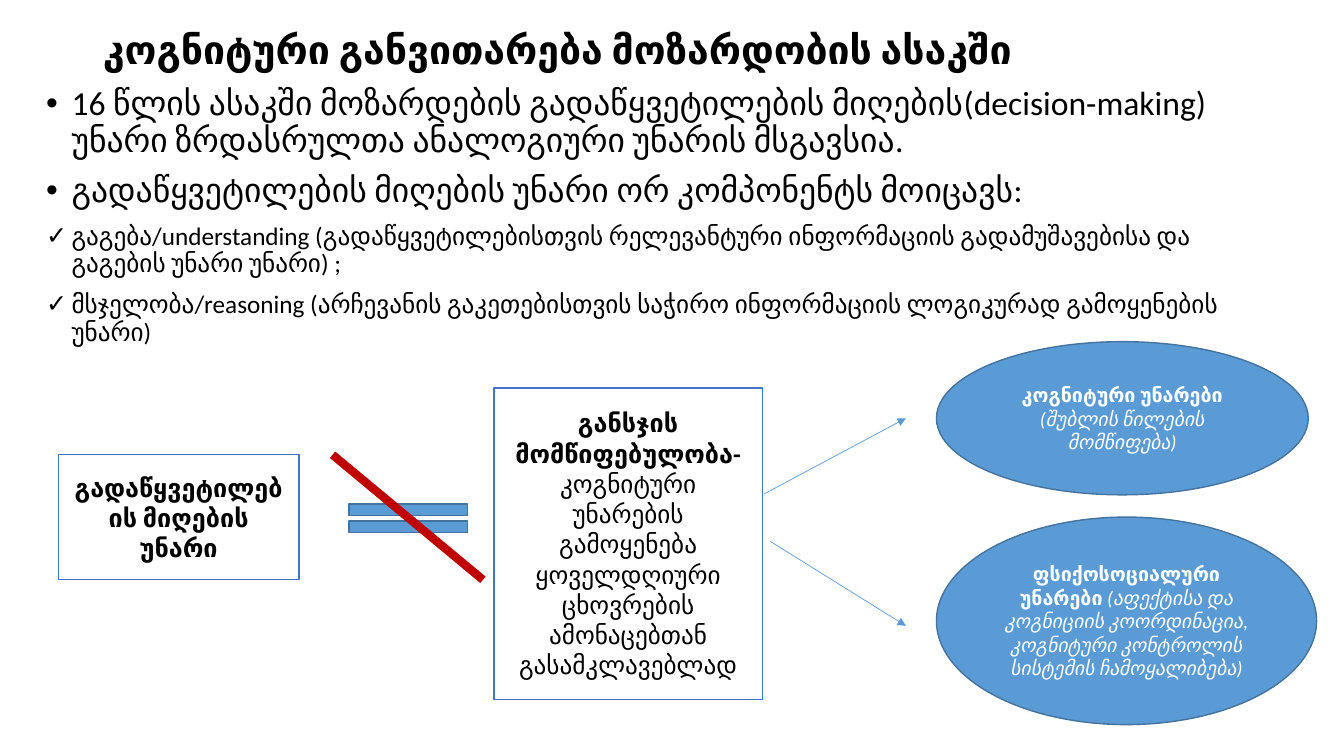
from pptx import Presentation
from pptx.dml.color import RGBColor
from pptx.enum.shapes import MSO_CONNECTOR, MSO_SHAPE
from pptx.enum.text import MSO_ANCHOR, MSO_AUTO_SIZE, PP_ALIGN
from pptx.oxml.ns import qn
from pptx.util import Cm, Pt
from lxml.etree import SubElement

FONT = "Calibri"
BLACK, WHITE = "000000", "FFFFFF"
BLUE, BLUE_EDGE, BOX_EDGE, RED = "5B9BD5", "43739E", "4472C4", "C00000"
BULLETS = [
    ("•", 24, "16 წლის ასაკში მოზარდების გადაწყვეტილების მიღების(decision-making) უნარი ზრდასრულთა ანალოგიური უნარის მსგავსია."),
    ("•", 24, "გადაწყვეტილების მიღების უნარი ორ კომპონენტს მოიცავს:"),
    ("✓", 18, "გაგება/understanding (გადაწყვეტილებისთვის რელევანტური ინფორმაციის გადამუშავებისა და გაგების უნარი უნარი) ;"),
    ("✓", 18, "მსჯელობა/reasoning (არჩევანის გაკეთებისთვის საჭირო ინფორმაციის ლოგიკურად გამოყენების უნარი)"),
]


def color(value):
    return RGBColor.from_string(value)


def apply(target, values):
    for name, value in values.items():
        setattr(target, name, value)


def place(shape, box):
    apply(shape, dict(zip(("left", "top", "width", "height"), map(Cm, box))))


def add_run(paragraph, text, size, font_color, **style):
    run = paragraph.add_run()
    run.text = text
    apply(run.font, {"name": FONT, "size": Pt(size), **style})
    run.font.color.rgb = color(font_color)


def add_title(slide, box, text):
    title = slide.shapes.title
    place(title, box)
    apply(title.text_frame, {
        "auto_size": MSO_AUTO_SIZE.NONE,
        "vertical_anchor": MSO_ANCHOR.MIDDLE,
    })
    paragraph = title.text_frame.paragraphs[0]
    apply(paragraph, {"alignment": PP_ALIGN.LEFT, "line_spacing": 0.9})
    add_run(paragraph, text, 28, BLACK, bold=True)


def add_bullets(slide, box, bullets):
    body = slide.placeholders[1]
    place(body, box)
    frame = body.text_frame
    frame.auto_size = MSO_AUTO_SIZE.NONE
    for index, (mark, size, text) in enumerate(bullets):
        paragraph = frame.add_paragraph() if index else frame.paragraphs[0]
        apply(paragraph, {"line_spacing": 0.9, "space_before": Pt(10)})
        add_run(paragraph, text, size, BLACK)
        properties = paragraph._p.get_or_add_pPr()
        properties.set("marL", str(Cm(0.64)))
        properties.set("indent", str(-Cm(0.64)))
        SubElement(properties, qn("a:buChar")).set("char", mark)


def add_node(slide, kind, box, fill, edge, runs=(), size=18, font_color=BLACK, margin=0.25):
    shape = slide.shapes.add_shape(kind, *map(Cm, box))
    shape.shadow.inherit = False
    shape.fill.solid()
    shape.fill.fore_color.rgb = color(fill)
    shape.line.color.rgb = color(edge)
    shape.line.width = Pt(1)
    apply(shape.text_frame, {
        "word_wrap": True,
        "vertical_anchor": MSO_ANCHOR.MIDDLE,
        "margin_left": Cm(margin),
        "margin_right": Cm(margin),
        "margin_top": Cm(margin / 2),
        "margin_bottom": Cm(margin / 2),
    })
    paragraph = shape.text_frame.paragraphs[0]
    paragraph.alignment = PP_ALIGN.CENTER
    for text, style in runs:
        add_run(paragraph, text, size, font_color, **style)


def add_line(slide, ends, line_color, width, arrow=False):
    connector = slide.shapes.add_connector(MSO_CONNECTOR.STRAIGHT, *map(Cm, ends))
    connector.line.color.rgb = color(line_color)
    connector.line.width = Pt(width)
    if arrow:
        SubElement(connector.line._get_or_add_ln(), qn("a:tailEnd")).set("type", "triangle")
    SubElement(connector._element.spPr, qn("a:effectLst"))


def add_diagram(slide, left, top):
    def box(x, y, width, height):
        return left + x, top + y, width, height

    def ends(x1, y1, x2, y2):
        return left + x1, top + y1, left + x2, top + y2

    bold, plain = {"bold": True}, {"bold": False}
    italic = {"bold": False, "italic": True}

    add_node(slide, MSO_SHAPE.RECTANGLE, box(0, 2.85, 6.07, 3.15), WHITE, BOX_EDGE,
             [("გადაწყვეტილების მიღების უნარი", bold)])
    add_node(slide, MSO_SHAPE.MATH_EQUAL, box(6.79, 3.84, 4.06, 1.22), BLUE, BLUE_EDGE)
    add_line(slide, ends(6.91, 2.85, 10.7, 6), RED, 6)
    add_node(slide, MSO_SHAPE.RECTANGLE, box(10.98, 1.17, 6.76, 7.85), WHITE, BOX_EDGE, [
        ("განსჯის მომწიფებულობა- ", bold),
        ("კოგნიტური უნარების გამოყენება ყოველდღიური ცხოვრების ამონაცებთან გასამკლავებლად", plain),
    ])
    for arrow in ((17.78, 3.84, 21.36, 1.93), (17.94, 5.03, 21.36, 7.16)):
        add_line(slide, ends(*arrow), BLUE, 0.5, arrow=True)
    abilities = [
        (box(22.13, 0, 9.37, 3.86), 0.25, "კოგნიტური უნარები ", "(შუბლის წილების მომწიფება)"),
        (box(22.13, 4.42, 9.58, 5.23), 0, "ფსიქოსოციალური უნარები ",
         "(აფექტისა და კოგნიციის კოორდინაცია, კოგნიტური კონტროლის სისტემის ჩამოყალიბება)"),
    ]
    for area, margin, name, detail in abilities:
        add_node(slide, MSO_SHAPE.OVAL, area, BLUE, BLUE_EDGE,
                 [(name, bold), (detail, italic)], 14, WHITE, margin)


def main():
    presentation = Presentation()
    apply(presentation, {"slide_width": Cm(33.87), "slide_height": Cm(19.05)})
    slide = presentation.slides.add_slide(presentation.slide_layouts[1])
    add_title(slide, (2.34, 0.56, 29.21, 1.5), "კოგნიტური განვითარება მოზარდობის ასაკში")
    add_bullets(slide, (0.91, 2.06, 30.63, 16.46), BULLETS)
    add_diagram(slide, 1.47, 8.61)
    presentation.save("out.pptx")


if __name__ == "__main__":
    main()
